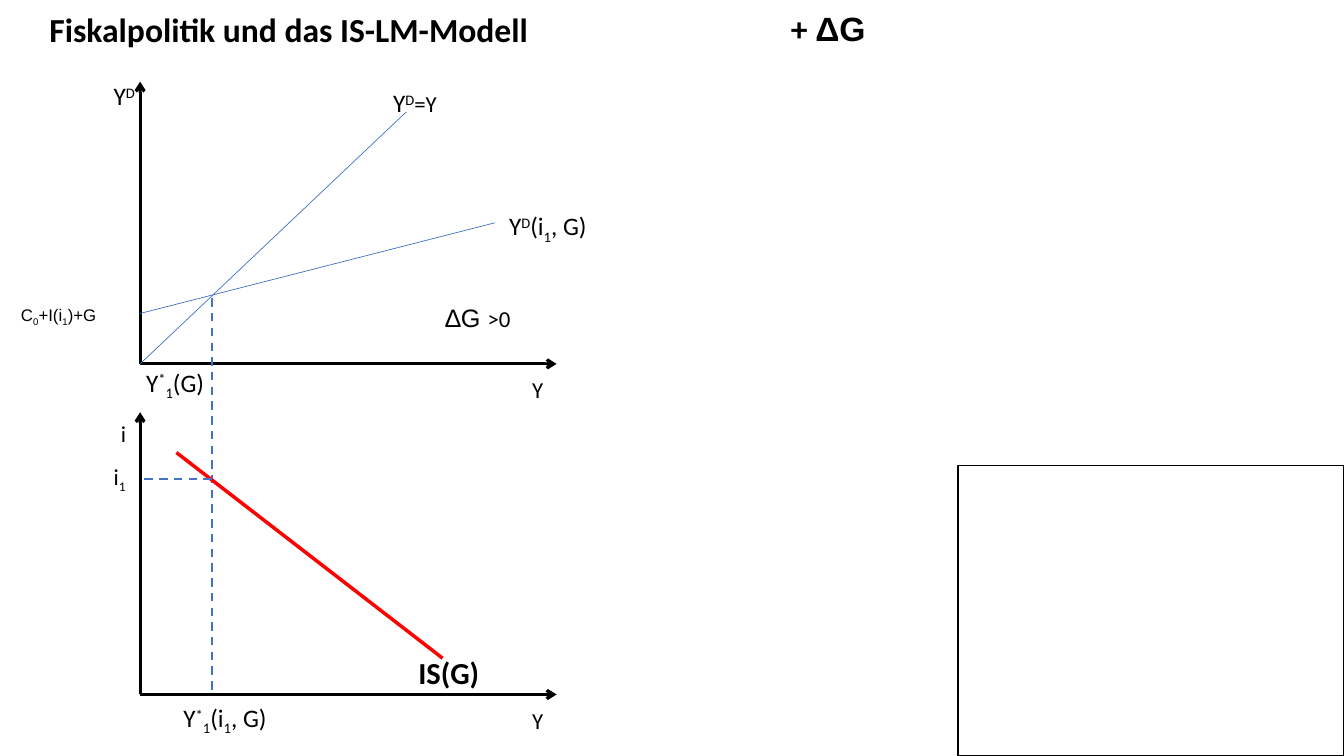
"""Build the slide on fiscal policy in the IS-LM model."""
from lxml.etree import SubElement
from pptx import Presentation
from pptx.dml.color import RGBColor
from pptx.enum.dml import MSO_LINE
from pptx.enum.shapes import MSO_CONNECTOR, MSO_SHAPE
from pptx.enum.text import MSO_ANCHOR, MSO_AUTO_SIZE, PP_ALIGN
from pptx.oxml.ns import qn
from pptx.util import Inches, Pt

COLORS = {"ink": "000000", "curve": "4472C4", "is_curve": "FF0000"}
BASELINES = {"^": "30000", "_": "-25000"}
HEADING = {"size": Pt(24), "bold": True}
SMALL = {"size": Pt(16.3)}
ARIAL = {"name": "Arial"}
ORIGIN_X, AXIS_END_X, AXIS_HEIGHT = 1.39, 5.52, 2.8
UPPER_Y, LOWER_Y = 3.61, 6.89
EQUILIBRIUM_X, INTEREST_Y = 2.1, 4.75


def rgb(color):
    """Return the named colour."""
    return RGBColor.from_string(COLORS[color])


def add_line(slide, start, end, color, width, dashed=False, arrow=False):
    """Draw a straight line between two points in inches."""
    line = slide.shapes.add_connector(
        MSO_CONNECTOR.STRAIGHT, *(Inches(value) for value in start + end))
    line.line.color.rgb = rgb(color)
    line.line.width = Pt(width)
    if dashed:
        line.line.dash_style = MSO_LINE.DASH
    properties = line._element.spPr
    if arrow:
        SubElement(properties.find(qn("a:ln")), qn("a:tailEnd"), type="arrow")
    SubElement(properties, qn("a:effectLst"))


def add_axes(slide, origin_y):
    """Draw the two arrows of one diagram from its origin."""
    origin = (ORIGIN_X, origin_y)
    for tip in ((ORIGIN_X, origin_y - AXIS_HEIGHT), (AXIS_END_X, origin_y)):
        add_line(slide, origin, tip, "ink", 2.25, arrow=True)


def add_text(slide, box, pieces, **formats):
    """Write text pieces; ^ raises a piece, _ lowers it, a pair adds formats."""
    label = slide.shapes.add_textbox(*(Inches(value) for value in box))
    paragraph = label.text_frame.paragraphs[0]
    for piece in pieces:
        text, extra = piece if isinstance(piece, tuple) else (piece, {})
        run = paragraph.add_run()
        run.text = text.lstrip("^_")
        values = {"name": "Calibri", "size": Pt(18), **formats, **extra}
        for name, value in values.items():
            setattr(run.font, name, value)
        run.font.color.rgb = rgb("ink")
        if text[0] in BASELINES:
            run._r.get_or_add_rPr().set("baseline", BASELINES[text[0]])
    return label.text_frame


def add_label(slide, box, pieces, **formats):
    """Write an unwrapped label that fits its text."""
    frame = add_text(slide, box, pieces, **formats)
    frame.word_wrap = False
    frame.auto_size = MSO_AUTO_SIZE.SHAPE_TO_FIT_TEXT


def add_heading(slide, box, pieces, alignment):
    """Write a bold heading at the top of the slide."""
    frame = add_text(slide, box, pieces, **HEADING)
    layout = {"word_wrap": True, "vertical_anchor": MSO_ANCHOR.MIDDLE,
              "margin_left": Inches(0.09), "margin_right": Inches(0.09),
              "margin_top": Inches(0.04), "margin_bottom": Inches(0.04)}
    for name, value in layout.items():
        setattr(frame, name, value)
    frame.paragraphs[0].alignment = alignment


def add_intercept(slide):
    """Write the autonomous demand beside the vertical axis."""
    frame = add_text(slide, (0.11, 2.88, 1.04, 0.42),
                     ["C", "_0", "+I(i", "_1", ")+G"], name="Arial", size=Pt(12))
    frame.word_wrap = True
    frame.paragraphs[0].line_spacing = 1.4


def add_frame(slide, box):
    """Draw the empty outlined rectangle."""
    frame = slide.shapes.add_shape(
        MSO_SHAPE.RECTANGLE, *(Inches(value) for value in box))
    frame.shadow.inherit = False
    frame.fill.background()
    frame.line.color.rgb = rgb("ink")
    frame.line.width = Pt(1)


def main():
    """Build and save the slide."""
    presentation = Presentation()
    presentation.slide_width = Inches(13.33)
    presentation.slide_height = Inches(7.5)
    slide = presentation.slides.add_slide(presentation.slide_layouts[6])

    add_heading(slide, (0.4, 0, 5.01, 0.58),
                ["Fiskalpolitik und das IS-LM-Modell"], PP_ALIGN.LEFT)
    add_heading(slide, (5.5, -0.01, 5.43, 0.58),
                ["+ ", ("ΔG", ARIAL)], PP_ALIGN.CENTER)

    for origin_y in (UPPER_Y, LOWER_Y):
        add_axes(slide, origin_y)
        add_label(slide, (5.18, origin_y + 0.07, 0.31, 0.38), ["Y"], **SMALL)

    add_line(slide, (ORIGIN_X, UPPER_Y), (4.03, 1.11), "curve", 0.5)
    add_line(slide, (ORIGIN_X, 3.11), (4.91, 2.21), "curve", 0.5)
    add_line(slide, (EQUILIBRIUM_X, 2.96), (EQUILIBRIUM_X, 6.86),
             "curve", 1.5, dashed=True)
    add_line(slide, (1.75, 4.49), (4.39, 6.53), "is_curve", 2.5)
    add_line(slide, (EQUILIBRIUM_X, INTEREST_Y), (ORIGIN_X, INTEREST_Y),
             "curve", 1.5, dashed=True)

    labels = [
        ((1.03, 0.75, 0.43, 0.4), ["Y", "^D"], {}),
        ((3.8, 0.82, 0.65, 0.4), ["Y", "^D", ("=Y", SMALL)], {}),
        ((4.95, 2.04, 1.01, 0.4), ["Y", "^D", "(i", "_1", ", G)"], {}),
        ((4.32, 2.95, 0.85, 0.4), [("∆G ", ARIAL), (">0", SMALL)], {}),
        ((1.35, 3.59, 0.81, 0.4), ["Y", "^*", "_1", "(G)"], {}),
        ((1.1, 4.11, 0.25, 0.38), ["i"], SMALL),
        ((1.03, 4.54, 0.33, 0.38), ["i", "_1"], SMALL),
        ((4.05, 6.44, 0.81, 0.47), ["IS(G)"], {"size": Pt(21.8), "bold": True}),
        ((1.72, 6.92, 1.07, 0.4), ["Y", "^*", "_1", "(i", "_1", ", G)"], {}),
    ]
    for box, pieces, formats in labels:
        add_label(slide, box, pieces, **formats)

    add_intercept(slide)
    add_frame(slide, (9.5, 4.62, 3.83, 2.88))
    presentation.save("out.pptx")


if __name__ == "__main__":
    main()
